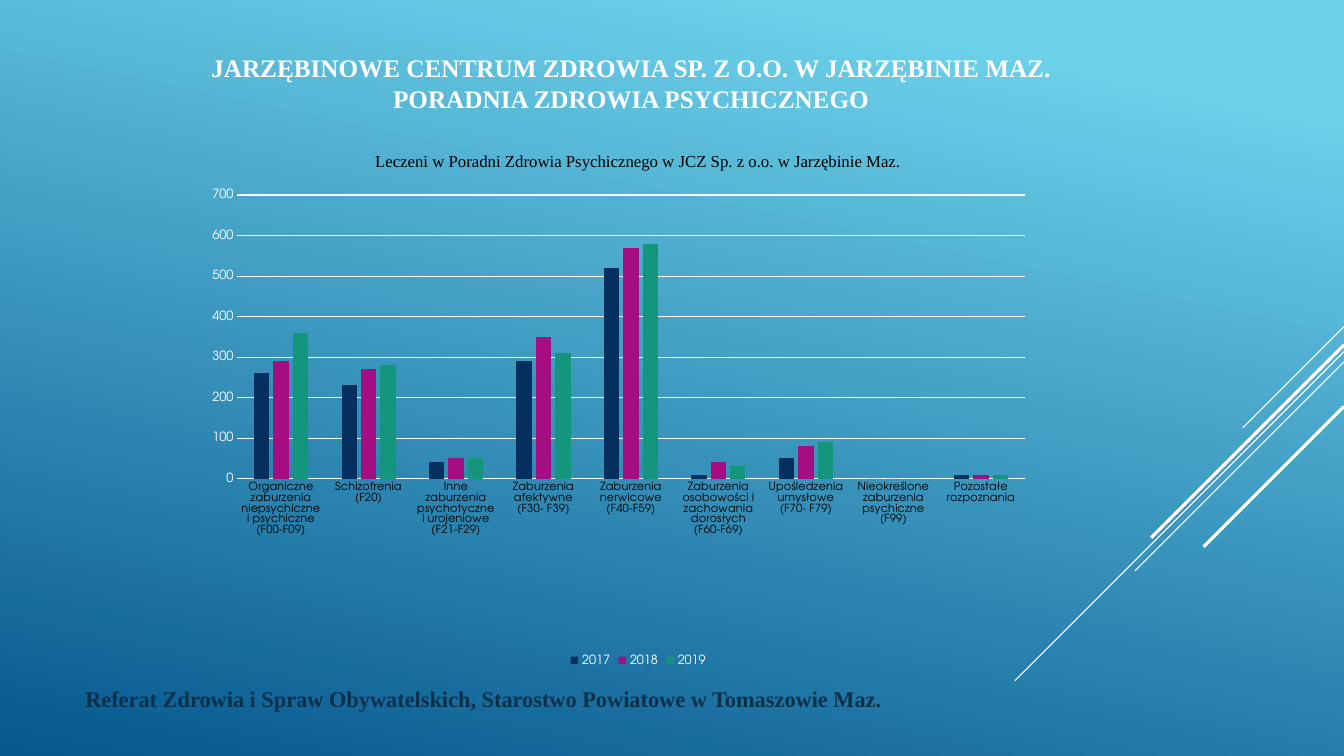
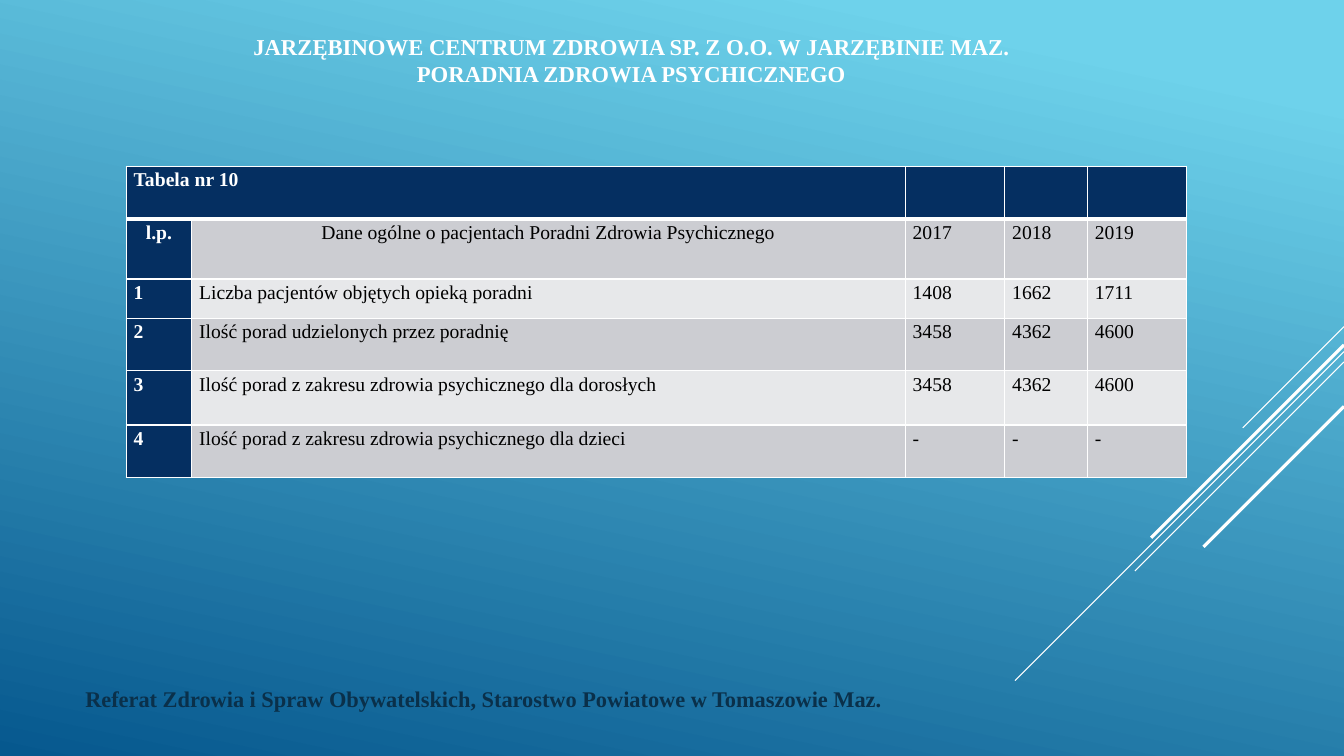
from lxml.etree import SubElement
from pptx import Presentation
from pptx.chart.data import CategoryChartData
from pptx.dml.color import RGBColor
from pptx.enum.chart import XL_CHART_TYPE, XL_LEGEND_POSITION, XL_TICK_MARK
from pptx.enum.shapes import MSO_CONNECTOR
from pptx.enum.text import MSO_ANCHOR, PP_ALIGN
from pptx.oxml import parse_xml
from pptx.oxml.ns import nsdecls, qn
from pptx.util import Cm, Pt

WIDTH, HEIGHT = 33.87, 19.05
SERIF, SANS = "Times New Roman", "TeX Gyre Adventor"
WHITE, BLACK, NAVY = "FFFFFF", "000000", "052F61"
FOOTER_COLOR = "0A304A"
SKY, DEEP_BLUE = "6ED2EB", "06588E"
BANDS = ["CCCDD2", "E7E8EA"]

TITLE = "JARZĘBINOWE CENTRUM ZDROWIA SP. Z O.O. W JARZĘBINIE MAZ.\nPORADNIA ZDROWIA PSYCHICZNEGO"
FOOTER = "Referat Zdrowia i Spraw Obywatelskich, Starostwo Powiatowe w Tomaszowie Maz."
DIAGONALS = [(8.23, 2.55, 0.75), (8.86, 8.29, 0.75), (9.12, 5.27, 0.75),
             (8.69, 4.86, 2.25), (10.24, 3.54, 2.25)]

CHART_TITLE = "Leczeni w Poradni Zdrowia Psychicznego w JCZ Sp. z o.o. w Jarzębinie Maz."
DIAGNOSES = [
    "Organiczne zaburzenia niepsychiczne i psychiczne (F00-F09)",
    "Schizofrenia (F20)",
    "Inne zaburzenia psychotyczne i urojeniowe (F21-F29)",
    "Zaburzenia afektywne (F30- F39)",
    "Zaburzenia nerwicowe (F40-F59)",
    "Zaburzenia osobowości i zachowania dorosłych (F60-F69)",
    "Upośledzenia umysłowe (F70- F79)",
    "Nieokreślone zaburzenia psychiczne (F99)",
    "Pozostałe rozpoznania",
]
PATIENTS = [
    ("2017", NAVY, [260, 230, 40, 290, 520, 10, 50, 0, 10]),
    ("2018", "A50E82", [290, 270, 50, 350, 570, 40, 80, 0, 10]),
    ("2019", "14967C", [360, 280, 50, 310, 580, 30, 90, 0, 10]),
]
PLOT_LAYOUT = {"x": 0.138, "y": 0.117, "w": 0.711, "h": 0.527}

ROWS = [
    ["Tabela nr 10", "", "", "", ""],
    ["l.p.", "Dane ogólne o pacjentach Poradni Zdrowia Psychicznego", "2017", "2018", "2019"],
    ["1", "Liczba pacjentów objętych opieką poradni", "1408", "1662", "1711"],
    ["2", "Ilość porad udzielonych przez poradnię", "3458", "4362", "4600"],
    ["3", "Ilość porad z zakresu zdrowia psychicznego dla dorosłych", "3458", "4362", "4600"],
    ["4", "Ilość porad z zakresu zdrowia psychicznego dla dzieci", "-", "-", "-"],
]
COL_WIDTHS = [1.65, 17.98, 2.51, 2.08, 2.51]
ROW_HEIGHTS = [1.32, 1.52, 0.99, 1.32, 1.37, 1.32]


def rgb(value):
    return RGBColor.from_string(value)


def set_font(font, size, color, name=SERIF, bold=False):
    font.size = Pt(size)
    font.name = name
    font.bold = bold
    font.color.rgb = rgb(color)


def set_line(line, color, width):
    line.color.rgb = rgb(color)
    line.width = Pt(width)


def set_background(slide):
    fill = slide.background.fill
    fill.gradient()
    fill.gradient_angle = 360 - 102
    for stop, color, position in zip(fill.gradient_stops, (SKY, DEEP_BLUE), (0.1, 1)):
        stop.color.rgb = rgb(color)
        stop.position = position


def add_diagonal(slide, top, run, width):
    line = slide.shapes.add_connector(
        MSO_CONNECTOR.STRAIGHT, Cm(WIDTH), Cm(top), Cm(WIDTH - run), Cm(top + run))
    set_line(line.line, WHITE, width)
    SubElement(line._element.spPr, qn("a:effectLst"))


def add_text(slide, box, text, size, color, align=PP_ALIGN.LEFT, anchor=MSO_ANCHOR.TOP):
    tf = slide.shapes.add_textbox(*map(Cm, box)).text_frame
    tf.word_wrap = True
    tf.vertical_anchor = anchor
    tf.text = text
    for p in tf.paragraphs:
        p.alignment = align
        for r in p.runs:
            set_font(r.font, size, color, bold=True)


def add_base_slide(prs, title_height, title_size):
    slide = prs.slides.add_slide(prs.slide_layouts[6])
    set_background(slide)
    for diagonal in DIAGONALS:
        add_diagonal(slide, *diagonal)
    add_text(slide, (3.18, 0.71, 25.45, title_height), TITLE, title_size, WHITE,
             PP_ALIGN.CENTER, MSO_ANCHOR.MIDDLE)
    add_text(slide, (1.9, 17.15, 20.95, 1.02), FOOTER, 16, FOOTER_COLOR)
    return slide


def set_plot_layout(chart):
    plot_area = chart.element.find(".//" + qn("c:plotArea"))
    for old in plot_area.findall(qn("c:layout")):
        plot_area.remove(old)
    modes = "".join(f'<c:{key}Mode val="edge"/>' for key in "xy")
    sizes = "".join(f'<c:{key} val="{value}"/>' for key, value in PLOT_LAYOUT.items())
    plot_area.insert(0, parse_xml(
        f'<c:layout {nsdecls("c")}><c:manualLayout><c:layoutTarget val="inner"/>'
        f'{modes}{sizes}</c:manualLayout></c:layout>'))


def format_axes(chart):
    for axis, size, color in ((chart.category_axis, 8, BLACK), (chart.value_axis, 9, WHITE)):
        axis.major_tick_mark = axis.minor_tick_mark = XL_TICK_MARK.NONE
        set_font(axis.tick_labels.font, size, color, SANS)
    set_line(chart.category_axis.format.line, WHITE, 0.75)
    values = chart.value_axis
    values.minimum_scale, values.maximum_scale, values.major_unit = 0, 700, 100
    values.format.line.fill.background()
    set_line(values.major_gridlines.format.line, WHITE, 0.75)


def add_patient_chart(slide):
    data = CategoryChartData()
    data.categories = DIAGNOSES
    for year, _, counts in PATIENTS:
        data.add_series(year, counts)
    chart = slide.shapes.add_chart(
        XL_CHART_TYPE.COLUMN_CLUSTERED, Cm(2.13), Cm(3.33), Cm(27.91), Cm(13.56), data).chart
    set_font(chart.font, 10, WHITE, SANS)
    tf = chart.chart_title.text_frame
    tf.text = CHART_TITLE
    set_font(tf.paragraphs[0].runs[0].font, 12, BLACK)
    chart.chart_title.include_in_layout = False
    chart.has_legend = True
    chart.legend.position = XL_LEGEND_POSITION.BOTTOM
    chart.legend.include_in_layout = False
    set_font(chart.legend.font, 9, WHITE, SANS)
    plot = chart.plots[0]
    plot.gap_width, plot.overlap = 219, -27
    plot.vary_by_categories = False
    for series, (_, color, _) in zip(plot.series, PATIENTS):
        series.format.fill.solid()
        series.format.fill.fore_color.rgb = rgb(color)
    format_axes(chart)
    set_plot_layout(chart)


def set_borders(cell, widths):
    tc_pr = cell._tc.get_or_add_tcPr()
    for index, (side, width) in enumerate(zip("LRTB", widths)):
        tc_pr.insert(index, parse_xml(
            f'<a:ln{side} {nsdecls("a")} w="{Pt(width)}"><a:solidFill>'
            f'<a:srgbClr val="{WHITE}"/></a:solidFill></a:ln{side}>'))


def format_cell(cell, text, row, col):
    dark = row == 0 or col == 0
    cell.fill.solid()
    cell.fill.fore_color.rgb = rgb(NAVY if dark else BANDS[(row - 1) % 2])
    set_borders(cell, (1, 1, 3 if row == 1 else 1, 3 if row == 0 else 1))
    cell.margin_left = cell.margin_right = Cm(0.19)
    cell.margin_top = cell.margin_bottom = 0
    p = cell.text_frame.paragraphs[0]
    p.text = text
    p.line_spacing = 1.15
    p.space_after = Pt(8)
    p.alignment = PP_ALIGN.CENTER if row == 1 and col < 2 else PP_ALIGN.LEFT
    for r in p.runs:
        set_font(r.font, 14, WHITE if dark else BLACK, bold=dark)


def add_patient_table(slide):
    table = slide.shapes.add_table(
        len(ROWS), len(COL_WIDTHS), Cm(3.18), Cm(4.19),
        Cm(sum(COL_WIDTHS)), Cm(sum(ROW_HEIGHTS))).table
    for column, width in zip(table.columns, COL_WIDTHS):
        column.width = Cm(width)
    for row, height in zip(table.rows, ROW_HEIGHTS):
        row.height = Cm(height)
    for i, texts in enumerate(ROWS):
        for j, text in enumerate(texts):
            format_cell(table.cell(i, j), text, i, j)
    table.cell(0, 0).merge(table.cell(0, 1))


def main():
    prs = Presentation()
    prs.slide_width, prs.slide_height = Cm(WIDTH), Cm(HEIGHT)
    add_patient_chart(add_base_slide(prs, 2.76, 18))
    add_patient_table(add_base_slide(prs, 1.6, 16.2))
    prs.save("out.pptx")


if __name__ == "__main__":
    main()
